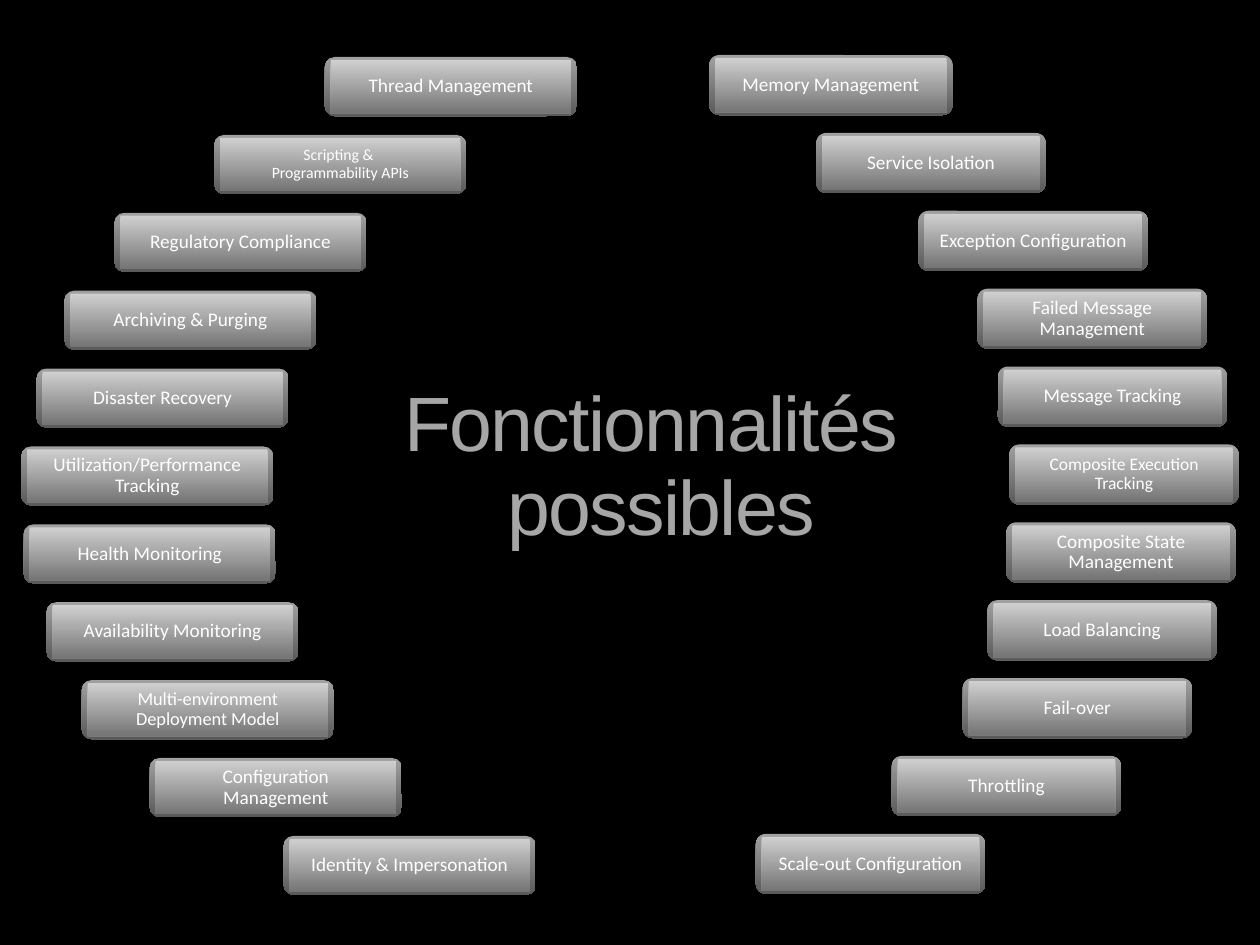
from lxml import etree
from pptx import Presentation
from pptx.dml.color import RGBColor
from pptx.enum.shapes import MSO_SHAPE
from pptx.enum.text import MSO_ANCHOR, PP_ALIGN
from pptx.oxml.ns import qn
from pptx.util import Cm, Pt

ROUNDED = MSO_SHAPE.ROUNDED_RECTANGLE
RECTANGLE = MSO_SHAPE.RECTANGLE
CENTER = PP_ALIGN.CENTER
TOP = MSO_ANCHOR.TOP
MIDDLE = MSO_ANCHOR.MIDDLE

BLACK = RGBColor(0x00, 0x00, 0x00)
WHITE = RGBColor(0xFF, 0xFF, 0xFF)
LIGHT_GREY = RGBColor(0xE6, 0xE6, 0xE6)
TITLE_GREY = RGBColor(0xA6, 0xA6, 0xA6)
DARK_GREY = RGBColor(0x80, 0x80, 0x80)

ROW_STEP = 1.57
BEZEL_X, BEZEL_Y = 0.12, 0.06
LABEL_SIZE = 11

LEFT_TOP, LEFT_WIDTH, LEFT_HEIGHT = 1.15, 5.08, 1.19
LEFT_FEATURES = [
    (6.55, "Thread Management"),
    (4.32, "Scripting & \vProgrammability APIs"),
    (2.31, "Regulatory Compliance"),
    (1.30, "Archiving & Purging"),
    (0.74, "Disaster Recovery"),
    (0.43, "Utilization/Performance Tracking"),
    (0.48, "Health Monitoring"),
    (0.94, "Availability Monitoring"),
    (1.65, "Multi-environment Deployment Model"),
    (3.02, "Configuration Management"),
    (5.72, "Identity & Impersonation"),
]

RIGHT_TOP, RIGHT_WIDTH, RIGHT_HEIGHT = 1.11, 4.62, 1.21
RIGHT_FEATURES = [
    (14.30, "Memory Management"),
    (16.46, "Service Isolation"),
    (18.52, "Exception Configuration"),
    (19.71, "Failed Message Management"),
    (20.12, "Message Tracking"),
    (20.35, "Composite Execution Tracking"),
    (20.29, "Composite State Management"),
    (19.91, "Load Balancing"),
    (19.41, "Fail-over"),
    (17.98, "Throttling"),
    (15.24, "Scale-out Configuration"),
]

SPECIAL_WIDTHS = {"Memory Management": 4.90}
SPECIAL_SIZES = {
    "Scripting & \vProgrammability APIs": 9,
    "Multi-environment Deployment Model": 10.5,
    "Composite Execution Tracking": 10,
}


def set_gradient(fill, first, last, end=1.0):
    fill.gradient()
    fill.gradient_angle = 270
    for stop, color, position in zip(fill.gradient_stops, (first, last), (0, end)):
        stop.color.rgb = color
        stop.position = position


def add_panel(group, kind, left, top, width, height):
    panel = group.shapes.add_shape(kind, Cm(left), Cm(top), Cm(width), Cm(height))
    panel.shadow.inherit = False
    panel.line.fill.background()
    set_gradient(panel.fill, LIGHT_GREY, DARK_GREY)
    for color in panel.fill._xPr.iter(qn("a:srgbClr")):
        etree.SubElement(color, qn("a:alpha")).set("val", "70000")
    return panel


def set_text(box, text, size, font_name, anchor):
    frame = box.text_frame
    frame.word_wrap = True
    frame.vertical_anchor = anchor
    frame.margin_left = frame.margin_right = Cm(0.3)
    frame.margin_top = frame.margin_bottom = Cm(0.15)
    para = frame.paragraphs[0]
    para.text = text
    para.alignment = CENTER
    para.line_spacing = 0.9
    para.font.size = Pt(size)
    para.font.name = font_name
    return para


def add_button(page, text, left, top, width, height):
    group = page.shapes.add_group_shape()
    add_panel(group, ROUNDED, left, top, width, height)
    face = add_panel(group, RECTANGLE, left + BEZEL_X, top + BEZEL_Y,
                     width - 2 * BEZEL_X, height - 2 * BEZEL_Y)
    para = set_text(face, text, SPECIAL_SIZES.get(text, LABEL_SIZE), "Calibri", MIDDLE)
    para.font.color.rgb = WHITE


def add_column(page, features, top, width, height):
    for row, (left, text) in enumerate(features):
        add_button(page, text, left, top + row * ROW_STEP,
                   SPECIAL_WIDTHS.get(text, width), height)


def add_title(page, text):
    box = page.shapes.add_textbox(Cm(1.9), Cm(7.62), Cm(22.86), Cm(3.18))
    para = set_text(box, text, 44, "Arial", TOP)
    set_gradient(para.font.fill, TITLE_GREY, WHITE, 0.5)
    para.font._element.set("spc", "-100")


def main():
    deck = Presentation()
    deck.slide_width, deck.slide_height = Cm(25.4), Cm(19.05)
    page = deck.slides.add_slide(deck.slide_layouts[6])
    page.background.fill.solid()
    page.background.fill.fore_color.rgb = BLACK
    add_title(page, "Fonctionnalités \vpossibles")
    add_column(page, RIGHT_FEATURES, RIGHT_TOP, RIGHT_WIDTH, RIGHT_HEIGHT)
    add_column(page, LEFT_FEATURES, LEFT_TOP, LEFT_WIDTH, LEFT_HEIGHT)
    deck.save("out.pptx")


if __name__ == "__main__":
    main()
